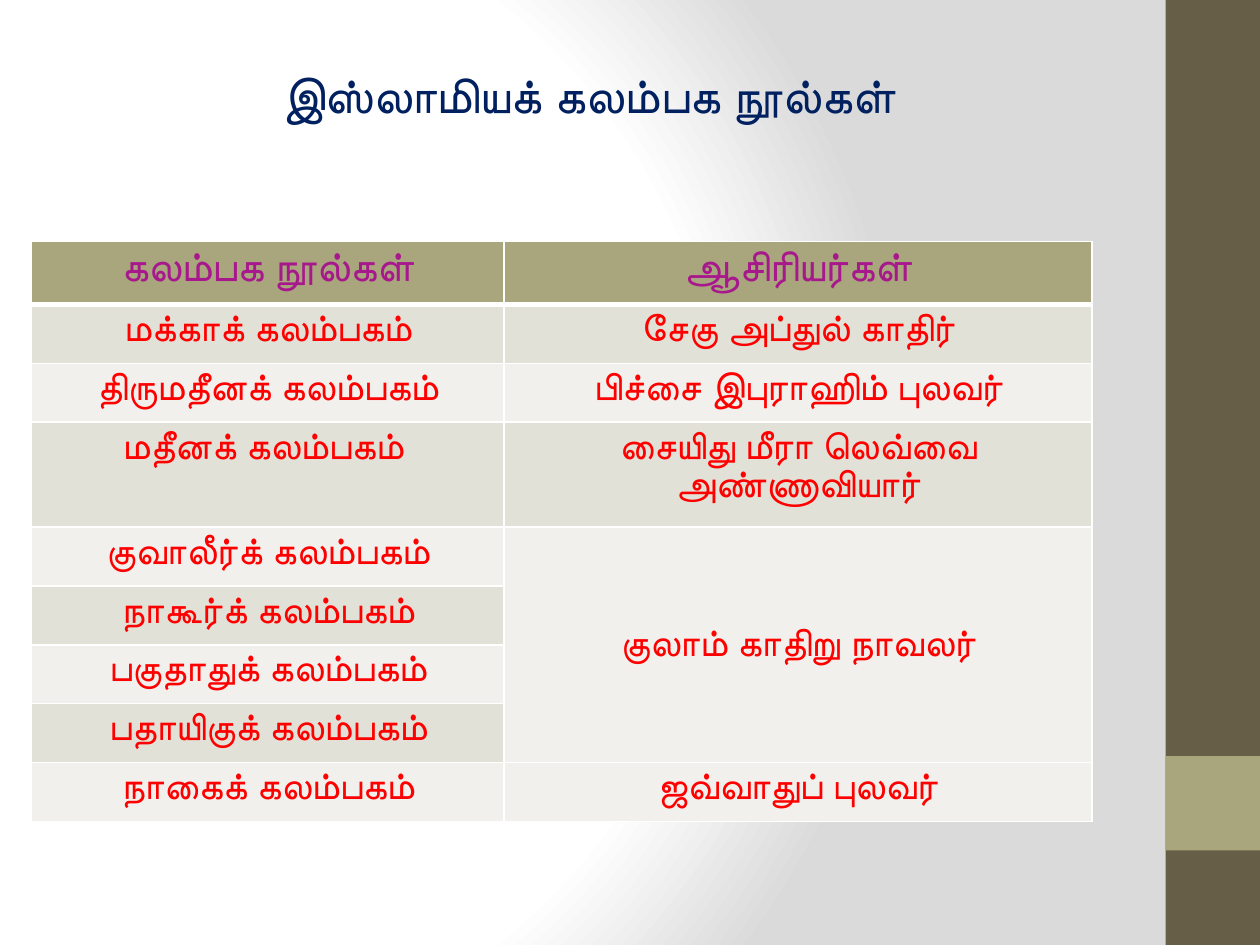
import lxml.etree
import pptx
import pptx.dml.color
import pptx.enum.shapes
import pptx.enum.text
import pptx.oxml
import pptx.oxml.ns
import pptx.util
from dataclasses import dataclass

Pt = pptx.util.Pt
qn = pptx.oxml.ns.qn
ALIGN = pptx.enum.text.PP_ALIGN
ANCHOR = pptx.enum.text.MSO_ANCHOR


@dataclass
class Theme:
    font: str = "Noto Sans Mono"
    title: str = "002060"
    head: str = "A8188D"
    body: str = "FF0000"
    bar: str = "675E47"
    accent: str = "A9A57C"
    bands: tuple = ("E2E1D7", "F1F0EC")
    rule: str = "FFFFFF"
    shade: str = "DADADA"
    title_size: int = 28
    head_size: int = 24
    body_size: int = 22


def rgb(code):
    return pptx.dml.color.RGBColor.from_string(code)


def write(frame, text, font, size, color, bold=False, align=ALIGN.CENTER):
    para = frame.paragraphs[0]
    para.alignment = align
    run = para.add_run()
    run.text = text
    run.font.name = font
    run.font.size = Pt(size)
    run.font.bold = bold
    run.font.color.rgb = rgb(color)


class Deck:
    def __init__(self, theme):
        self.theme = theme
        self.pres = pptx.Presentation()
        self.pres.slide_width, self.pres.slide_height = Pt(720), Pt(540)
        self.slide = self.pres.slides.add_slide(self.pres.slide_layouts[5])

    def backdrop(self):
        """Fill the page with a round fade from white to grey."""
        stops = ((0, self.theme.rule), (75, self.theme.rule), (100, self.theme.shade))
        marks = "".join(
            f'<a:gs pos="{pos * 1000}"><a:srgbClr val="{code}"/></a:gs>'
            for pos, code in stops)
        page = pptx.oxml.parse_xml(
            f'<p:bg {pptx.oxml.ns.nsdecls("p", "a")}><p:bgPr>'
            f'<a:gradFill rotWithShape="1"><a:gsLst>{marks}</a:gsLst>'
            '<a:path path="circle">'
            '<a:fillToRect l="20000" t="50000" r="100000" b="50000"/></a:path>'
            '</a:gradFill><a:effectLst/></p:bgPr></p:bg>')
        self.slide.element.find(qn("p:cSld")).insert(0, page)

    def block(self, left, top, width, height, color):
        shape = self.slide.shapes.add_shape(
            pptx.enum.shapes.MSO_SHAPE.RECTANGLE,
            Pt(left), Pt(top), Pt(width), Pt(height))
        shape.shadow.inherit = False
        shape.fill.solid()
        shape.fill.fore_color.rgb = rgb(color)
        shape.line.fill.background()

    def title(self, text, left, top, width, height):
        shape = self.slide.shapes.title
        shape.left, shape.top = Pt(left), Pt(top)
        shape.width, shape.height = Pt(width), Pt(height)
        frame = shape.text_frame
        frame.word_wrap = True
        frame.vertical_anchor = ANCHOR.TOP
        frame.auto_size = pptx.enum.text.MSO_AUTO_SIZE.SHAPE_TO_FIT_TEXT
        write(frame, text, self.theme.font, self.theme.title_size,
              self.theme.title, bold=True)

    def edge(self, cell, side, width):
        line = lxml.etree.SubElement(
            cell._tc.get_or_add_tcPr(), qn("a:ln" + side), w=str(Pt(width)))
        fill = lxml.etree.SubElement(line, qn("a:solidFill"))
        lxml.etree.SubElement(fill, qn("a:srgbClr"), val=self.theme.rule)

    def table(self, rows, left, top, widths, heights):
        theme = self.theme
        grid = self.slide.shapes.add_table(
            len(rows), len(widths), Pt(left), Pt(top),
            Pt(sum(widths)), Pt(sum(heights))).table
        for col, width in zip(grid.columns, widths):
            col.width = Pt(width)
        for i, (row, height) in enumerate(zip(rows, heights)):
            grid.rows[i].height = Pt(height)
            is_head = i == 0
            for j, text in enumerate(row):
                cell = grid.cell(i, j)
                for side in "LRTB":
                    thick = (is_head and side == "B") or (i == 1 and side == "T")
                    self.edge(cell, side, 3 if thick else 1)
                cell.fill.solid()
                cell.fill.fore_color.rgb = rgb(
                    theme.accent if is_head else theme.bands[(i - 1) % 2])
                if text:
                    write(cell.text_frame, text, theme.font,
                          theme.head_size if is_head else theme.body_size,
                          theme.head if is_head else theme.body, bold=is_head)
        return grid


BOOKS = [
    ("கலம்பக நூல்கள்", "ஆசிரியர்கள்"),
    ("மக்காக் கலம்பகம்", "சேகு அப்துல் காதிர்"),
    ("திருமதீனக் கலம்பகம்", "பிச்சை இபுராஹிம் புலவர்"),
    ("மதீனக் கலம்பகம் ", "சையிது மீரா லெவ்வை அண்ணாவியார்"),
    ("குவாலீர்க் கலம்பகம்", "குலாம் காதிறு நாவலர்"),
    ("நாகூர்க் கலம்பகம்", None),
    ("பகுதாதுக் கலம்பகம்", None),
    ("பதாயிகுக் கலம்பகம்", None),
    ("நாகைக் கலம்பகம்", "ஜவ்வாதுப் புலவர்"),
]


def main():
    theme = Theme()
    deck = Deck(theme)

    # Page and side bar
    deck.backdrop()
    deck.block(666, 0, 54, 540, theme.bar)
    deck.block(666, 432, 54, 54, theme.accent)

    # Title
    deck.title("இஸ்லாமியக் கலம்பக நூல்கள்", 126.5, 33, 420, 41)

    # Books and authors; one author spans four books
    heights = [36] + [33.5] * 2 + [60] + [33.5] * 5
    grid = deck.table(BOOKS, 18, 138, (270, 336), heights)
    shared = grid.cell(4, 1)
    shared.merge(grid.cell(7, 1))
    shared.vertical_anchor = ANCHOR.MIDDLE

    deck.pres.save("out.pptx")


if __name__ == "__main__":
    main()
